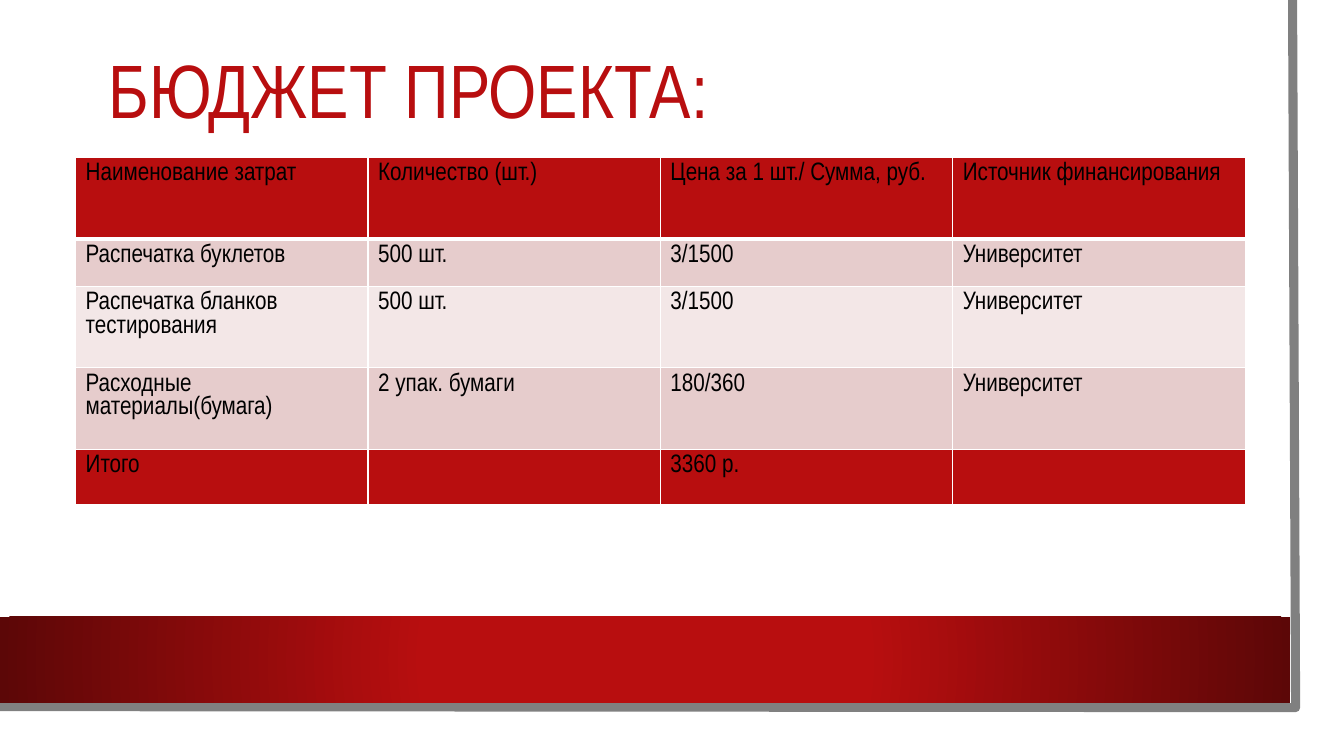
from lxml import etree
from pptx import Presentation
from pptx.dml.color import RGBColor
from pptx.enum.shapes import MSO_SHAPE
from pptx.enum.text import MSO_ANCHOR, MSO_AUTO_SIZE, PP_ALIGN
from pptx.oxml.ns import qn
from pptx.util import Inches, Pt

RECTANGLE = MSO_SHAPE.RECTANGLE
MIDDLE = MSO_ANCHOR.MIDDLE
NO_FIT = MSO_AUTO_SIZE.NONE
LEFT = PP_ALIGN.LEFT
TITLE_ONLY = 5

COLORS = {
    "red": "B80E0F",
    "dark": "5C0707",
    "rose": "E6CCCC",
    "pale": "F3E7E7",
    "white": "FFFFFF",
    "black": "000000",
    "gray": "808080",
}
TITLE_FORMAT = {"name": "Arial Narrow", "size": Pt(54)}
CELL_FORMAT = {"name": "Arial Narrow", "size": Pt(18), "bold": False}

EXPENSES = [
    ["Наименование затрат", "Количество (шт.)", "Цена за 1 шт./ Сумма, руб.", "Источник финансирования"],
    ["Распечатка буклетов", "500 шт.", "3/1500", "Университет"],
    ["Распечатка бланков тестирования", "500 шт.", "3/1500", "Университет"],
    ["Расходные материалы(бумага)", "2 упак. бумаги", "180/360", "Университет"],
]
TOTAL = [["Итого", "", "3360 р.", ""]]


def color(name):
    """Return the named colour."""
    return RGBColor.from_string(COLORS[name])


def format_font(font, values, color_name):
    """Apply format values and a colour to a font."""
    for name, value in values.items():
        setattr(font, name, value)
    font.color.rgb = color(color_name)


def add_color(parent, color_name):
    """Append a colour element to an XML parent."""
    etree.SubElement(parent, qn("a:srgbClr"), val=COLORS[color_name])


def add_frame(page, left, top, right, bottom):
    """Draw the gray line along the right and bottom edges."""
    builder = page.shapes.build_freeform(Inches(right - 0.03), Inches(top))
    corners = [(right, bottom), (left, bottom - 0.01)]
    builder.add_line_segments([(Inches(x), Inches(y)) for x, y in corners], close=False)
    frame = builder.convert_to_shape()
    frame.shadow.inherit = False
    frame.fill.background()
    frame.line.color.rgb = color("gray")
    frame.line.width = Pt(6.5)


def add_band(page, left, top, width, height):
    """Draw the red band that darkens away from its centre."""
    band = page.shapes.add_shape(RECTANGLE, *map(Inches, (left, top, width, height)))
    band.shadow.inherit = False
    band.line.fill.background()
    band.fill.gradient()
    gradient = band._element.spPr.find(qn("a:gradFill"))
    for child in list(gradient):
        gradient.remove(child)
    stops = etree.SubElement(gradient, qn("a:gsLst"))
    for position, name in ((34, "red"), (100, "dark")):
        add_color(etree.SubElement(stops, qn("a:gs"), pos=str(position * 1000)), name)
    circle = etree.SubElement(gradient, qn("a:path"), path="circle")
    etree.SubElement(circle, qn("a:fillToRect"), dict.fromkeys("ltrb", "50000"))


def add_title(page, left, top, width, height):
    """Place and format the title."""
    title = page.shapes.title
    title.left, title.top, title.width, title.height = map(Inches, (left, top, width, height))
    frame = title.text_frame
    frame.text = "БЮДЖЕТ ПРОЕКТА:"
    frame.auto_size = NO_FIT
    frame.vertical_anchor = MIDDLE
    paragraph = frame.paragraphs[0]
    paragraph.alignment = LEFT
    paragraph.line_spacing = 0.9
    format_font(paragraph.font, TITLE_FORMAT, "red")


def add_borders(cell, bottom_width):
    """Give a cell white borders."""
    properties = cell._tc.get_or_add_tcPr()
    for side, width in (("L", 1), ("R", 1), ("T", 1), ("B", bottom_width)):
        line = etree.SubElement(properties, qn(f"a:ln{side}"), w=str(Pt(width)))
        add_color(etree.SubElement(line, qn("a:solidFill")), "white")


def add_budget_table(page, left, top, width, heights, rows, fills, bottom_widths):
    """Add a table with equal columns and one fill for each row."""
    columns = len(rows[0])
    box = map(Inches, (left, top, width, sum(heights)))
    table = page.shapes.add_table(len(rows), columns, *box).table
    table.first_row = table.horz_banding = False
    for column in table.columns:
        column.width = Inches(width / columns)
    for index, texts in enumerate(rows):
        table.rows[index].height = Inches(heights[index])
        for cell, text in zip(table.rows[index].cells, texts):
            cell.text = text
            add_borders(cell, bottom_widths[index])
            cell.fill.solid()
            cell.fill.fore_color.rgb = color(fills[index])
            format_font(cell.text_frame.paragraphs[0].font, CELL_FORMAT, "black")


def add_budget_page(deck):
    """Build the budget slide."""
    page = deck.slides.add_slide(deck.slide_layouts[TITLE_ONLY])
    add_frame(page, -0.03, 0, 12.85, 7.02)
    add_band(page, 0, 6.12, 12.8, 0.85)
    add_title(page, 0.98, 0.3, 11.37, 1.26)
    left, top, width = 0.75, 1.56, 11.6
    heights = [0.81, 0.47, 0.81, 0.81]
    add_budget_table(page, left, top, width, heights, EXPENSES,
                     ["red", "rose", "pale", "rose"], [3, 1, 1, 1])
    add_budget_table(page, left, top + sum(heights), width, [0.56], TOTAL, ["red"], [3])


def main():
    """Create and save the deck."""
    deck = Presentation()
    deck.slide_width, deck.slide_height = Inches(13.33), Inches(7.5)
    add_budget_page(deck)
    deck.save("out.pptx")


if __name__ == "__main__":
    main()
